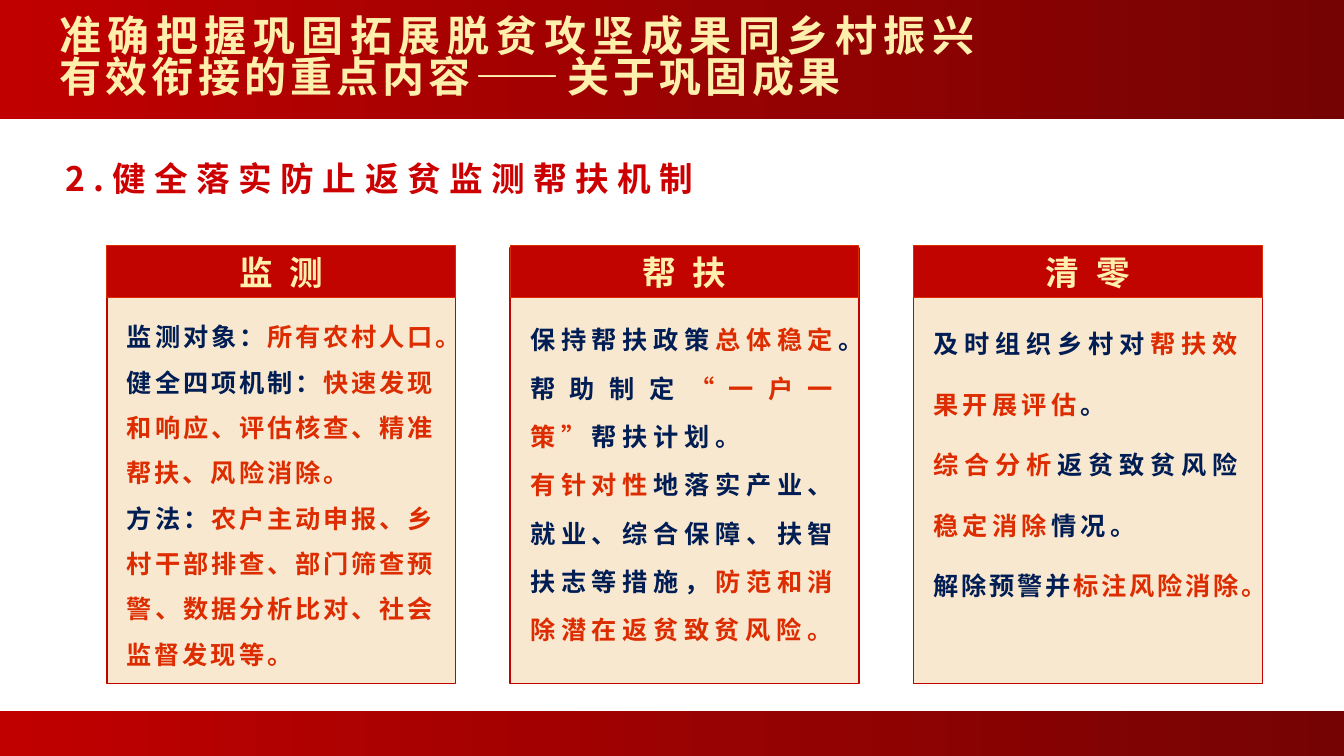
from pptx import Presentation
from pptx.dml.color import RGBColor
from pptx.enum.lang import MSO_LANGUAGE_ID
from pptx.enum.shapes import MSO_SHAPE
from pptx.enum.text import MSO_ANCHOR, MSO_AUTO_SIZE, PP_ALIGN
from pptx.oxml.ns import qn
from pptx.util import Inches, Pt

RECTANGLE = MSO_SHAPE.RECTANGLE
PROCESS = MSO_SHAPE.FLOWCHART_PROCESS
MIDDLE = MSO_ANCHOR.MIDDLE
CENTER, JUSTIFY = PP_ALIGN.CENTER, PP_ALIGN.JUSTIFY
FIT_SHAPE = MSO_AUTO_SIZE.SHAPE_TO_FIT_TEXT
CHINESE = MSO_LANGUAGE_ID.SIMPLIFIED_CHINESE

FONT = "Noto Sans CJK SC"
WHITE = RGBColor(0xFF, 0xFF, 0xFF)
BAND_RED = RGBColor(0xC0, 0x00, 0x00)
BAND_DARK = RGBColor(0x76, 0x03, 0x03)
HEADING_RED = RGBColor(0xCC, 0x00, 0x00)
CARD_RED = RGBColor(0xC2, 0x04, 0x00)
CARD_CREAM = RGBColor(0xF9, 0xE8, 0xD0)
ORANGE = RGBColor(0xDC, 0x2C, 0x00)
NAVY = RGBColor(0x00, 0x1D, 0x54)
PALE_GOLD = RGBColor(0xFE, 0xEF, 0xAC)
DEEP_GOLD = RGBColor(0xE9, 0xBE, 0x61)

CARD_LEFT, CARD_PITCH, CARD_WIDTH = 1.06, 4.0, 3.46

# Each card: heading, body top, body height, line spacing, paragraphs;
# each paragraph: letter spacing, then its runs as (text, colour).
CARDS = [
    ("监测", 2.99, 3.7, 1.5, [
        (2, [("监测对象：", NAVY), ("所有农村人口。", ORANGE)]),
        (2, [("健全四项机制：", NAVY),
             ("快速发现和响应、评估核查、精准帮扶、风险消除。", ORANGE)]),
        (2, [("方法：", NAVY),
             ("农户主动申报、乡村干部排查、部门筛查预警、数据分析比对、社会监督发现等。", ORANGE)]),
    ]),
    ("帮扶", 2.99, 3.7, 1.6, [
        (4, [("保持帮扶政策", NAVY), ("总体稳定", ORANGE), ("。", NAVY)]),
        (4, [("帮助制定", NAVY), ("“一户一策”", ORANGE), ("帮扶计划。", NAVY)]),
        (4, [("有针对性", ORANGE),
             ("地落实产业、就业、综合保障、扶智扶志等措施，", NAVY),
             ("防范和消除潜在返贫致贫风险。", ORANGE)]),
    ]),
    ("清零", 2.91, 3.46, 2.0, [
        (3, [("及时组织乡村对", NAVY), ("帮扶效果开展评估", ORANGE), ("。", NAVY)]),
        (3, [("综合分析", ORANGE), ("返贫致贫风险", NAVY),
             ("稳定消除", ORANGE), ("情况。", NAVY)]),
        (2, [("解除预警并", NAVY), ("标注风险消除。", ORANGE)]),
    ]),
]


def set_gradient(fill, stops, angle):
    """Apply two (position, colour) stops; angle runs counter-clockwise."""
    fill.gradient()
    fill.gradient_angle = angle
    for stop, (position, color) in zip(fill.gradient_stops, stops):
        stop.position = position
        stop.color.rgb = color


def add_run(paragraph, text, size, spacing, color=None):
    """Add a bold run; without a colour it takes the gold gradient."""
    run = paragraph.add_run()
    run.text = text
    font = run.font
    font.size, font.bold, font.name = Pt(size), True, FONT
    font.language_id = CHINESE
    if color is None:
        set_gradient(font.fill, [(0.49, PALE_GOLD), (1, DEEP_GOLD)], 270)
    else:
        font.color.rgb = color
    properties = run._r.get_or_add_rPr()
    properties.set("spc", str(spacing * 100))
    east_asian = properties.makeelement(qn("a:ea"), {"typeface": FONT})
    properties.find(qn("a:latin")).addnext(east_asian)


def add_box(shapes, kind, left, top, width, height):
    box = shapes.add_shape(kind, Inches(left), Inches(top), Inches(width), Inches(height))
    box.shadow.inherit = False
    return box


def add_band(shapes, top, height):
    band = add_box(shapes, RECTANGLE, 0, top, 13.35, height)
    set_gradient(band.fill, [(0, BAND_RED), (1, BAND_DARK)], 0)
    band.line.fill.background()


def add_panel(shapes, kind, left, top, height, fill, line, line_width):
    panel = add_box(shapes, kind, left, top, CARD_WIDTH, height)
    panel.fill.solid()
    panel.fill.fore_color.rgb = fill
    panel.line.color.rgb = line
    panel.line.width = Pt(line_width)
    return panel


def add_text_frame(shapes, left, top, width, height, margins=(0.1, 0.05, 0.1, 0.05)):
    """Return the frame of a wrapping text box; margins are left, top, right, bottom."""
    frame = shapes.add_textbox(
        Inches(left), Inches(top), Inches(width), Inches(height)).text_frame
    frame.word_wrap = True
    (frame.margin_left, frame.margin_top,
     frame.margin_right, frame.margin_bottom) = map(Inches, margins)
    return frame


def add_title(shapes):
    frame = add_text_frame(shapes, 0, 0.08, 9.79, 1.02, (0.59, 0.04, 0.08, 0.04))
    frame.vertical_anchor = MIDDLE
    title = frame.paragraphs[0]
    title.alignment = JUSTIFY
    title.line_spacing = 0.82
    add_run(title, "准确把握巩固拓展脱贫攻坚成果同乡村振兴有效衔接的重点内容——关于巩固成果", 30, 3)


def add_section_heading(shapes):
    frame = add_text_frame(shapes, 0.55, 1.44, 6.53, 0.58)
    frame.word_wrap = False
    frame.auto_size = FIT_SHAPE
    frame.vertical_anchor = MIDDLE
    heading = frame.paragraphs[0]
    heading.line_spacing = 1.2
    add_run(heading, "2.健全落实防止返贫监测帮扶机制", 24, 6, HEADING_RED)


def add_card(slide, left, heading, body_top, body_height, line_spacing, paragraphs):
    shapes = slide.shapes.add_group_shape().shapes
    add_panel(shapes, PROCESS, left, 2.46, 4.32, CARD_CREAM, CARD_RED, 1)
    header = add_panel(shapes, RECTANGLE, left, 2.44, 0.51, CARD_RED, ORANGE, 0.75)
    header.text_frame.vertical_anchor = MIDDLE
    header_line = header.text_frame.paragraphs[0]
    header_line.alignment = CENTER
    add_run(header_line, heading, 24, 12)

    body = add_text_frame(shapes, left, body_top, CARD_WIDTH, body_height,
                          (0.2, 0.05, 0.2, 0.05))
    for index, (spacing, runs) in enumerate(paragraphs):
        paragraph = body.add_paragraph() if index else body.paragraphs[0]
        paragraph.alignment = JUSTIFY
        paragraph.line_spacing = line_spacing
        for text, color in runs:
            add_run(paragraph, text, 18, spacing, color)


def main():
    presentation = Presentation()
    presentation.slide_width = Inches(13.33)
    presentation.slide_height = Inches(7.5)
    slide = presentation.slides.add_slide(presentation.slide_layouts[6])
    slide.background.fill.solid()
    slide.background.fill.fore_color.rgb = WHITE

    add_band(slide.shapes, 0, 1.18)
    add_band(slide.shapes, 7.05, 0.47)
    add_section_heading(slide.shapes)
    for column, card in enumerate(CARDS):
        add_card(slide, CARD_LEFT + column * CARD_PITCH, *card)
    add_title(slide.shapes)
    presentation.save("out.pptx")


if __name__ == "__main__":
    main()
